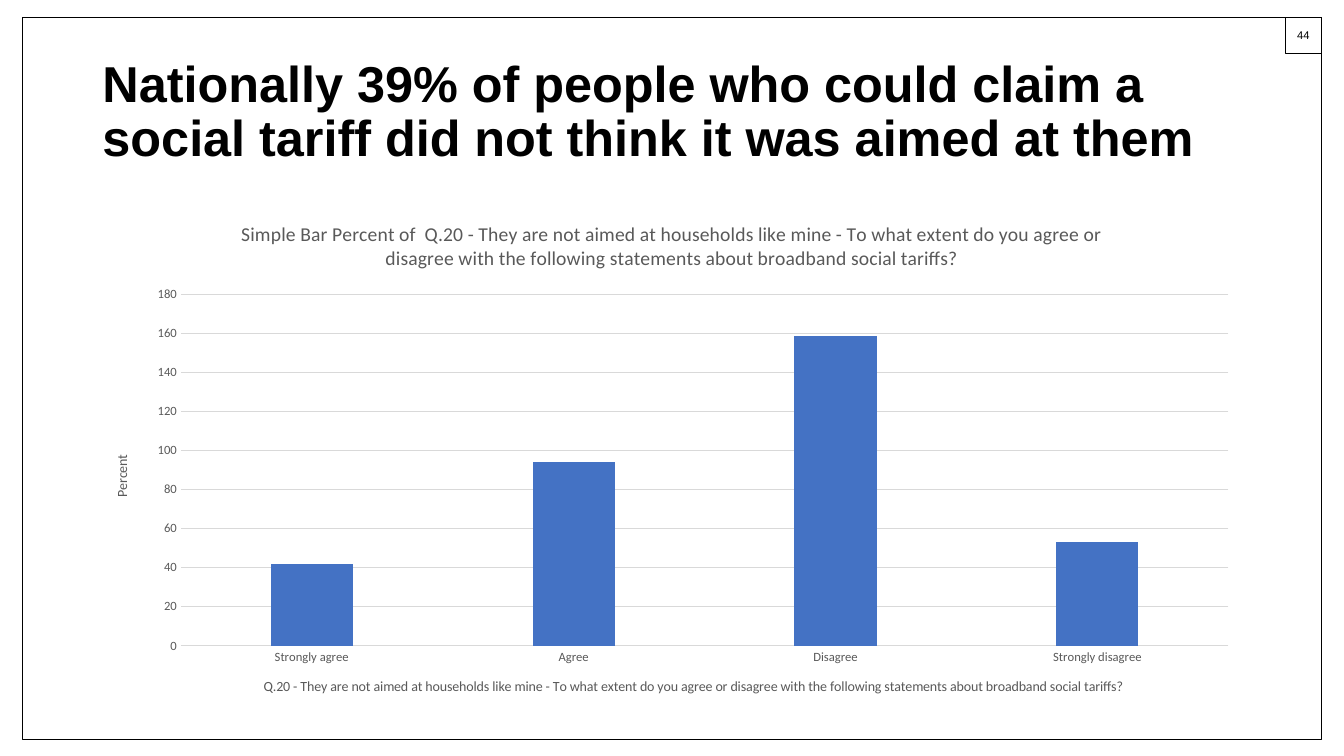
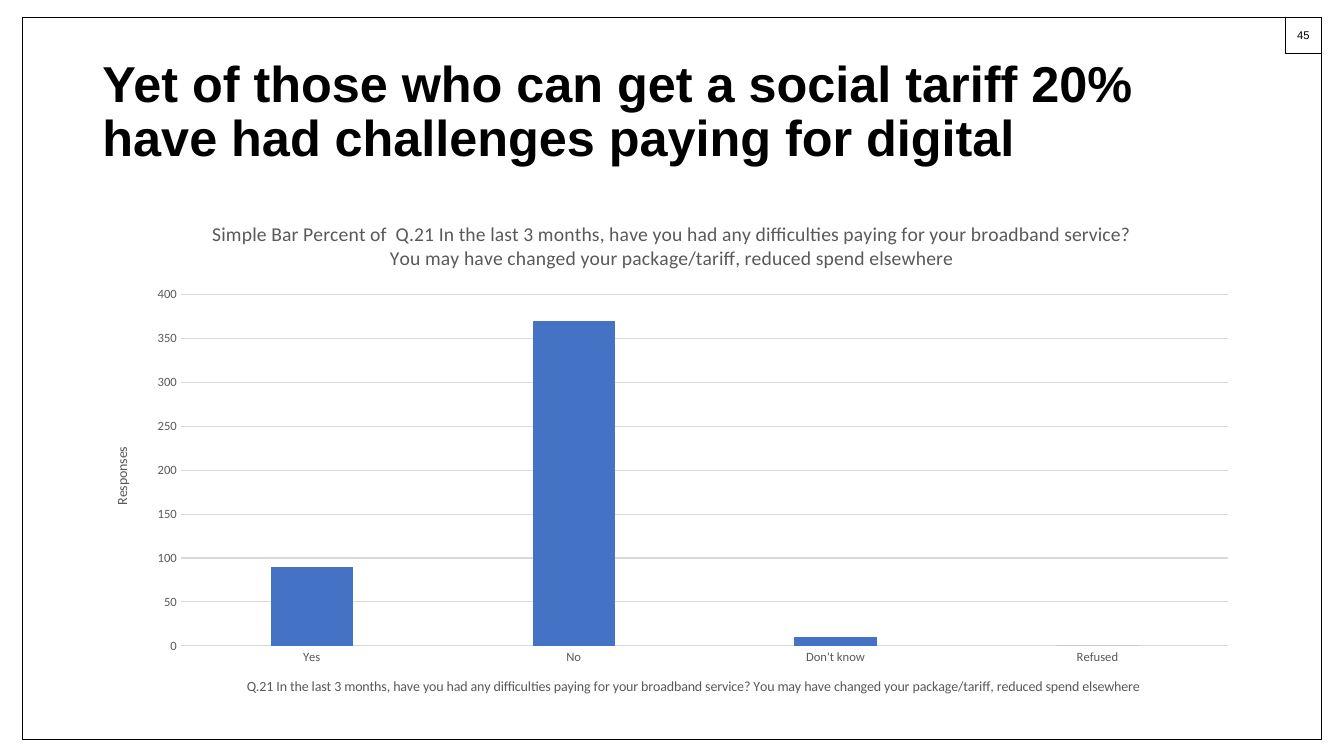
"""Build two survey slides, each with a framed title and a column chart."""
from dataclasses import dataclass

from pptx import Presentation
from pptx.chart.data import CategoryChartData
from pptx.dml.color import RGBColor
from pptx.enum.chart import XL_CHART_TYPE as ChartType, XL_TICK_MARK as TickMark
from pptx.enum.shapes import MSO_SHAPE as Preset
from pptx.enum.text import MSO_ANCHOR as Anchor, PP_ALIGN as Align
from pptx.util import Pt


@dataclass(frozen=True)
class Theme:
    """Colours, fonts and type sizes of the deck."""
    ink: RGBColor = RGBColor.from_string("000000")
    label: RGBColor = RGBColor.from_string("595959")
    grid: RGBColor = RGBColor.from_string("D9D9D9")
    bar: RGBColor = RGBColor.from_string("4472C4")
    heading_font: str = "Arial"
    chart_font: str = "Calibri"
    title_size: float = 36
    chart_title_size: float = 14
    axis_title_size: float = 10
    tick_size: float = 9
    number_size: float = 8


@dataclass(frozen=True)
class Box:
    """A rectangle in points."""
    left: float
    top: float
    width: float
    height: float

    def lengths(self):
        """Return the four lengths for python-pptx."""
        return Pt(self.left), Pt(self.top), Pt(self.width), Pt(self.height)


@dataclass(frozen=True)
class Survey:
    """Content of one survey slide."""
    number: int
    title: str
    question: str
    unit: str
    answers: dict
    maximum: int
    step: int


THEME = Theme()
FRAME = Box(16.3, 12.4, 927.4, 515.5)
NUMBER_SIDE = 25.5
TITLE_BOX = Box(66, 28.8, 828, 104.4)
CHART_BOX = Box(66, 143.8, 828, 367.4)

SURVEYS = [
    Survey(
        44,
        "Nationally 39% of people who could claim a social tariff did not think it was aimed at them",
        "Q.20 - They are not aimed at households like mine - To what extent do you agree or "
        "disagree with the following statements about broadband social tariffs?",
        "Percent",
        {"Strongly agree": 42, "Agree": 94, "Disagree": 159, "Strongly disagree": 53},
        180, 20,
    ),
    Survey(
        45,
        "Yet of those who can get a social tariff 20% have had challenges paying for digital",
        "Q.21 In the last 3 months, have you had any difficulties paying for your broadband "
        "service? You may have changed your package/tariff, reduced spend elsewhere",
        "Responses",
        {"Yes": 90, "No": 370, "Don't know": 10, "Refused": 0},
        400, 50,
    ),
]


def style_font(font, name, size, color, bold=False):
    """Set the face, size, colour and weight of a font."""
    font.name = name
    font.size = Pt(size)
    font.bold = bold
    font.color.rgb = color


def add_outline(slide, box):
    """Add an unfilled rectangle with a thin line."""
    shape = slide.shapes.add_shape(Preset.RECTANGLE, *box.lengths())
    shape.shadow.inherit = False
    shape.fill.background()
    shape.line.color.rgb = THEME.ink
    shape.line.width = Pt(0.5)
    return shape


def add_frame(slide, box, number):
    """Add the page frame with the slide number in its top right corner."""
    corner = box.left + box.width - NUMBER_SIDE
    shape = add_outline(slide, Box(corner, box.top, NUMBER_SIDE, NUMBER_SIDE))
    text_frame = shape.text_frame
    text_frame.margin_left = text_frame.margin_right = 0
    text_frame.vertical_anchor = Anchor.MIDDLE
    text_frame.text = str(number)
    paragraph = text_frame.paragraphs[0]
    paragraph.alignment = Align.CENTER
    style_font(paragraph.runs[0].font, THEME.heading_font, THEME.number_size, THEME.ink)
    add_outline(slide, box)


def place_title(slide, box, text):
    """Move, fill and format the title placeholder."""
    title = slide.shapes.title
    title.left, title.top, title.width, title.height = box.lengths()
    text_frame = title.text_frame
    text_frame.text = text
    text_frame.word_wrap = True
    text_frame.vertical_anchor = Anchor.MIDDLE
    paragraph = text_frame.paragraphs[0]
    paragraph.alignment = Align.LEFT
    paragraph.line_spacing = 0.9
    style_font(paragraph.runs[0].font, THEME.heading_font, THEME.title_size, THEME.ink, True)


def set_chart_text(text_frame, text, size):
    """Write a chart or axis title."""
    text_frame.text = text
    font = text_frame.paragraphs[0].runs[0].font
    style_font(font, THEME.chart_font, size, THEME.label)


def style_axis(axis, title):
    """Format the title, labels and tick marks of an axis."""
    set_chart_text(axis.axis_title.text_frame, title, THEME.axis_title_size)
    style_font(axis.tick_labels.font, THEME.chart_font, THEME.tick_size, THEME.label)
    axis.major_tick_mark = axis.minor_tick_mark = TickMark.NONE


def style_rule(line):
    """Format an axis line or a gridline."""
    line.color.rgb = THEME.grid
    line.width = Pt(0.75)


def add_column_chart(slide, box, survey):
    """Add the column chart of the answers to a survey question."""
    data = CategoryChartData()
    data.categories = list(survey.answers)
    data.add_series("Series 1", list(survey.answers.values()))
    graphic = slide.shapes.add_chart(ChartType.COLUMN_CLUSTERED, *box.lengths(), data)
    chart = graphic.chart
    style_font(chart.font, THEME.chart_font, THEME.axis_title_size, THEME.ink)
    chart.has_legend = False
    heading = f"Simple Bar Percent of  {survey.question}"
    set_chart_text(chart.chart_title.text_frame, heading, THEME.chart_title_size)
    chart.chart_title.include_in_layout = False

    category_axis, value_axis = chart.category_axis, chart.value_axis
    style_axis(category_axis, survey.question)
    style_rule(category_axis.format.line)
    style_axis(value_axis, survey.unit)
    value_axis.format.line.fill.background()
    value_axis.minimum_scale = 0
    value_axis.maximum_scale = survey.maximum
    value_axis.major_unit = survey.step
    style_rule(value_axis.major_gridlines.format.line)

    plot = chart.plots[0]
    plot.gap_width = 219
    plot.overlap = -27
    plot.vary_by_categories = False
    fill = plot.series[0].format.fill
    fill.solid()
    fill.fore_color.rgb = THEME.bar


def add_survey_slide(presentation, survey):
    """Add one framed slide with a title and a chart."""
    slide = presentation.slides.add_slide(presentation.slide_layouts[5])
    add_frame(slide, FRAME, survey.number)
    place_title(slide, TITLE_BOX, survey.title)
    add_column_chart(slide, CHART_BOX, survey)


def main():
    """Build and save the presentation."""
    presentation = Presentation()
    presentation.slide_width = Pt(960)
    presentation.slide_height = Pt(540)
    for survey in SURVEYS:
        add_survey_slide(presentation, survey)
    presentation.save("out.pptx")


if __name__ == "__main__":
    main()
